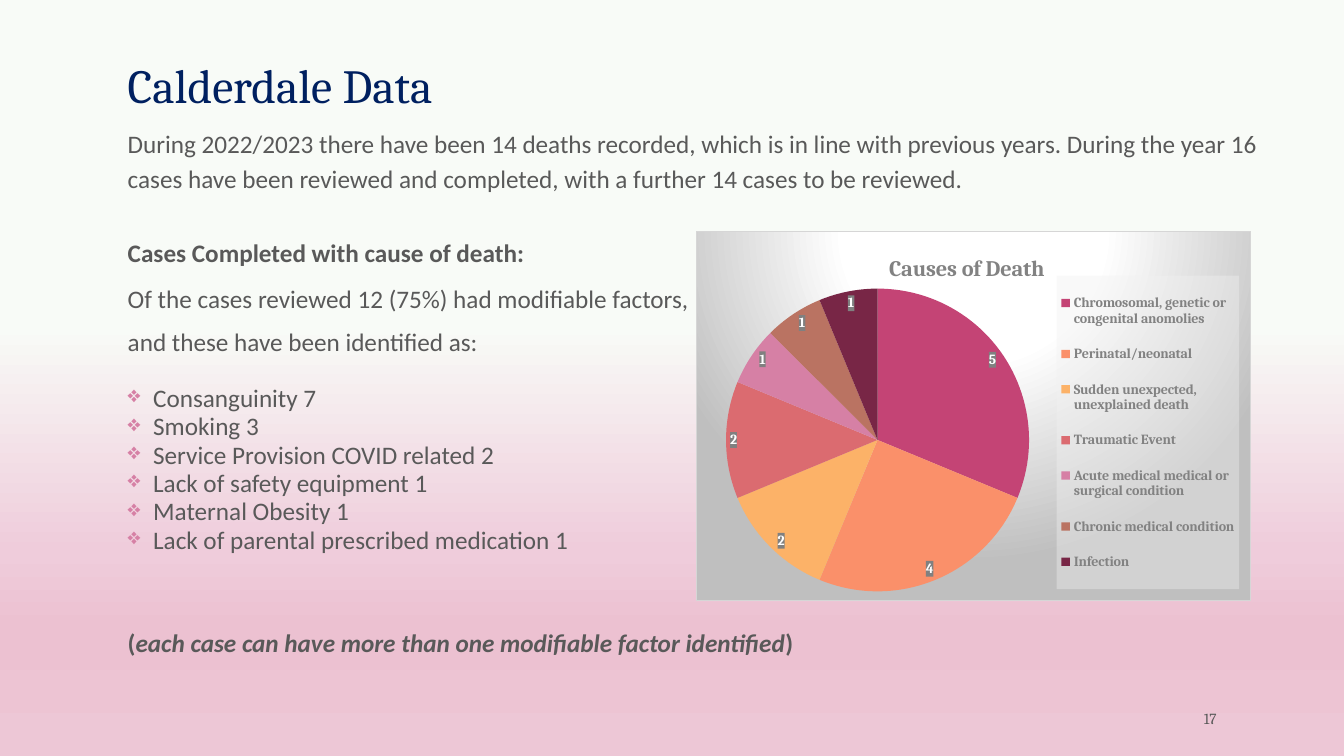
from lxml import etree
from pptx import Presentation
from pptx import util as u
from pptx.chart.data import CategoryChartData
from pptx.dml.color import RGBColor
from pptx.enum import chart as charts, text
from pptx.oxml import parse_xml
from pptx.oxml.ns import nsdecls, qn

NAVY = RGBColor(0x00, 0x20, 0x60)
BODY = RGBColor(0x59, 0x59, 0x59)
GREY = RGBColor(0x82, 0x82, 0x82)
LABEL_BOX = RGBColor(0x80, 0x80, 0x80)
LEGEND_BOX = RGBColor(0xF2, 0xF2, 0xF2)
BORDER = RGBColor(0xD6, 0xD6, 0xD6)
SILVER = RGBColor(0xBF, 0xBF, 0xBF)
WHITE = RGBColor(0xFF, 0xFF, 0xFF)
PINK = RGBColor(0xD6, 0x80, 0xA5)
BACKGROUND = [
    (43, RGBColor(0xF8, 0xFB, 0xF7)),
    (73, RGBColor(0xEF, 0xCC, 0xDB)),
    (83, RGBColor(0xEC, 0xC1, 0xD1)),
    (100, RGBColor(0xED, 0xC7, 0xD6)),
]
CAUSES = [
    ("Chromosomal, genetic or congenital anomolies", 5, RGBColor(0xC4, 0x44, 0x75)),
    ("Perinatal/neonatal", 4, RGBColor(0xFA, 0x90, 0x6A)),
    ("Sudden unexpected, unexplained death", 2, RGBColor(0xFC, 0xB2, 0x68)),
    ("Traumatic Event", 2, RGBColor(0xDB, 0x6B, 0x70)),
    ("Acute medical medical or surgical condition", 1, PINK),
    ("Chronic medical condition", 1, RGBColor(0xBA, 0x73, 0x62)),
    ("Infection", 1, RGBColor(0x78, 0x26, 0x46)),
]
FACTORS = [
    "Consanguinity 7",
    "Smoking 3",
    "Service Provision COVID related 2",
    "Lack of safety equipment 1",
    "Maternal Obesity 1",
    "Lack of parental prescribed medication 1",
]


def style_font(font, name, size, color, bold=False, italic=False):
    font.name, font.size, font.bold, font.italic = name, u.Pt(size), bold, italic
    font.color.rgb = color


def gradient(stops, direction):
    colors = "".join(
        f'<a:gs pos="{position * 1000}"><a:srgbClr val="{color}"/></a:gs>'
        for position, color in stops)
    return f'<a:gradFill {nsdecls("a")}><a:gsLst>{colors}</a:gsLst>{direction}</a:gradFill>'


def solid(color, alpha=100):
    return (f'<a:solidFill><a:srgbClr val="{color}"><a:alpha val="{alpha * 1000}"/>'
            '</a:srgbClr></a:solidFill>')


def chart_box(fill, line="<a:ln><a:noFill/></a:ln>"):
    return parse_xml(f'<c:spPr {nsdecls("c", "a")}>{fill}{line}</c:spPr>')


def place(element, index, inner=False, **edges):
    """Give a chart part a fixed place, in fractions of the chart."""
    for old in element.findall(qn("c:layout")):
        element.remove(old)
    target = '<c:layoutTarget val="inner"/>' if inner else ""
    modes = '<c:xMode val="edge"/><c:yMode val="edge"/>'
    values = "".join(f'<c:{key} val="{value}"/>' for key, value in edges.items())
    element.insert(index, parse_xml(
        f'<c:layout {nsdecls("c")}><c:manualLayout>{target}{modes}{values}'
        '</c:manualLayout></c:layout>'))


def write(paragraph, *runs, font="Calibri", size=18, color=BODY, bold=False, italic=False,
          line=None, before=0, after=0, align=None, bullet=None):
    """Fill a paragraph; a run is a string or a (string, italic) pair."""
    paragraph.line_spacing = line
    paragraph.space_before, paragraph.space_after = u.Pt(before), u.Pt(after)
    paragraph.alignment = align
    for item in runs:
        words, slanted = item if isinstance(item, tuple) else (item, italic)
        run = paragraph.add_run()
        run.text = words
        style_font(run.font, font, size, color, bold, slanted)
    if bullet:
        properties = paragraph._p.get_or_add_pPr()
        properties.set("marL", str(u.Cm(0.64)))
        properties.set("indent", str(-u.Cm(0.64)))
        color_mark = etree.SubElement(properties, qn("a:buClr"))
        etree.SubElement(color_mark, qn("a:srgbClr"), val=str(PINK))
        etree.SubElement(properties, qn("a:buSzPct"), val="90000")
        etree.SubElement(properties, qn("a:buChar"), char=bullet)


class DataSlide:
    heading_font = "Cambria"

    def __init__(self, presentation):
        self.slide = presentation.slides.add_slide(presentation.slide_layouts[6])

    def background(self, stops):
        self.slide.background.fill.gradient()
        old = next(self.slide.element.iter(qn("a:gradFill")))
        old.getparent().replace(old, parse_xml(gradient(stops, '<a:lin ang="5400000"/>')))

    def text_box(self, left, top, width, height, anchor=text.MSO_ANCHOR.TOP):
        box = self.slide.shapes.add_textbox(*map(u.Cm, (left, top, width, height)))
        frame = box.text_frame
        frame.word_wrap = True
        frame.vertical_anchor = anchor
        return frame

    def pie(self, left, top, width, height, title, causes):
        data = CategoryChartData()
        data.categories = [name for name, _, _ in causes]
        data.add_series("Series 1", [count for _, count, _ in causes])
        chart = self.slide.shapes.add_chart(
            charts.XL_CHART_TYPE.PIE, *map(u.Cm, (left, top, width, height)), data).chart
        style_font(chart.font, self.heading_font, 10, BODY)

        # Chart frame
        glow = gradient(
            [(0, WHITE), (39, WHITE), (100, SILVER)],
            '<a:path path="circle"><a:fillToRect l="50000" t="-80000" r="50000" b="180000"/>'
            '</a:path>')
        space = chart._chartSpace
        space.find(qn("c:chart")).addnext(
            chart_box(glow, f'<a:ln w="{u.Pt(0.75)}">{solid(BORDER)}</a:ln>'))
        place(next(space.iter(qn("c:plotArea"))), 0, inner=True,
              x=0.03, y=0.155, w=0.593, h=0.821)

        # Title
        chart.has_title = True
        write(chart.chart_title.text_frame.paragraphs[0], title,
              font=self.heading_font, size=16, color=GREY, bold=True)
        place(chart.chart_title._element, 1, x=0.34, y=0.05)

        # Legend
        chart.has_legend = True
        legend = chart.legend
        legend.position = charts.XL_LEGEND_POSITION.RIGHT
        legend.include_in_layout = False
        style_font(legend.font, self.heading_font, 10, GREY, bold=True)
        place(legend._element, 1, x=0.65, y=0.12, w=0.33, h=0.85)
        legend._element.find(qn("c:overlay")).addnext(chart_box(solid(LEGEND_BOX, 39)))

        # Slices and their values
        plot = chart.plots[0]
        plot.vary_by_categories = True
        for index, (_, _, color) in enumerate(causes):
            fill = plot.series[0].points[index].format.fill
            fill.solid()
            fill.fore_color.rgb = color
        labels = plot.series[0].data_labels
        labels.show_value = True
        labels.position = charts.XL_LABEL_POSITION.BEST_FIT
        style_font(labels.font, self.heading_font, 10, WHITE, bold=True)
        labels._element.find(qn("c:txPr")).addprevious(chart_box(solid(LABEL_BOX)))


def main():
    presentation = Presentation()
    presentation.slide_width, presentation.slide_height = u.Cm(33.87), u.Cm(19.05)
    page = DataSlide(presentation)
    page.background(BACKGROUND)

    # Title
    title = page.text_box(2.97, 1.27, 27.94, 1.73, text.MSO_ANCHOR.BOTTOM)
    write(title.paragraphs[0], "Calderdale Data", font="Cambria", size=34, color=NAVY, line=0.9)

    # Findings
    body = page.text_box(2.97, 3, 29.69, 15.77)
    tight = u.Pt(20.2)
    write(body.paragraphs[0],
          "During 2022/2023 there have been 14 deaths recorded, which is in line with previous "
          "years. During the year 16 cases have been reviewed and completed, with a further "
          "14 cases to be reviewed.", line=1.15, after=10)
    write(body.add_paragraph(), "Cases Completed with cause of death:",
          bold=True, line=1.15, before=18)
    write(body.add_paragraph(), "Of the cases reviewed 12 (75%) had modifiable factors,",
          line=tight, before=12.7)
    write(body.add_paragraph(), "and these have been identified as:", line=tight, before=10.5)
    for index, factor in enumerate(FACTORS):
        write(body.add_paragraph(), factor, line=tight, before=0 if index else 19.8, bullet="❖")
    write(body.add_paragraph(), "(",
          ("each case can have more than one modifiable factor identified", True), ")",
          bold=True, line=tight, before=54)

    # Causes of death
    page.pie(17.55, 5.82, 13.97, 9.32, "Causes of Death", CAUSES)

    # Slide number
    number = page.text_box(27.86, 17.78, 3.05, 0.64, text.MSO_ANCHOR.MIDDLE)
    write(number.paragraphs[0], "17", font="Cambria", size=11, align=text.PP_ALIGN.RIGHT)

    presentation.save("out.pptx")


if __name__ == "__main__":
    main()
